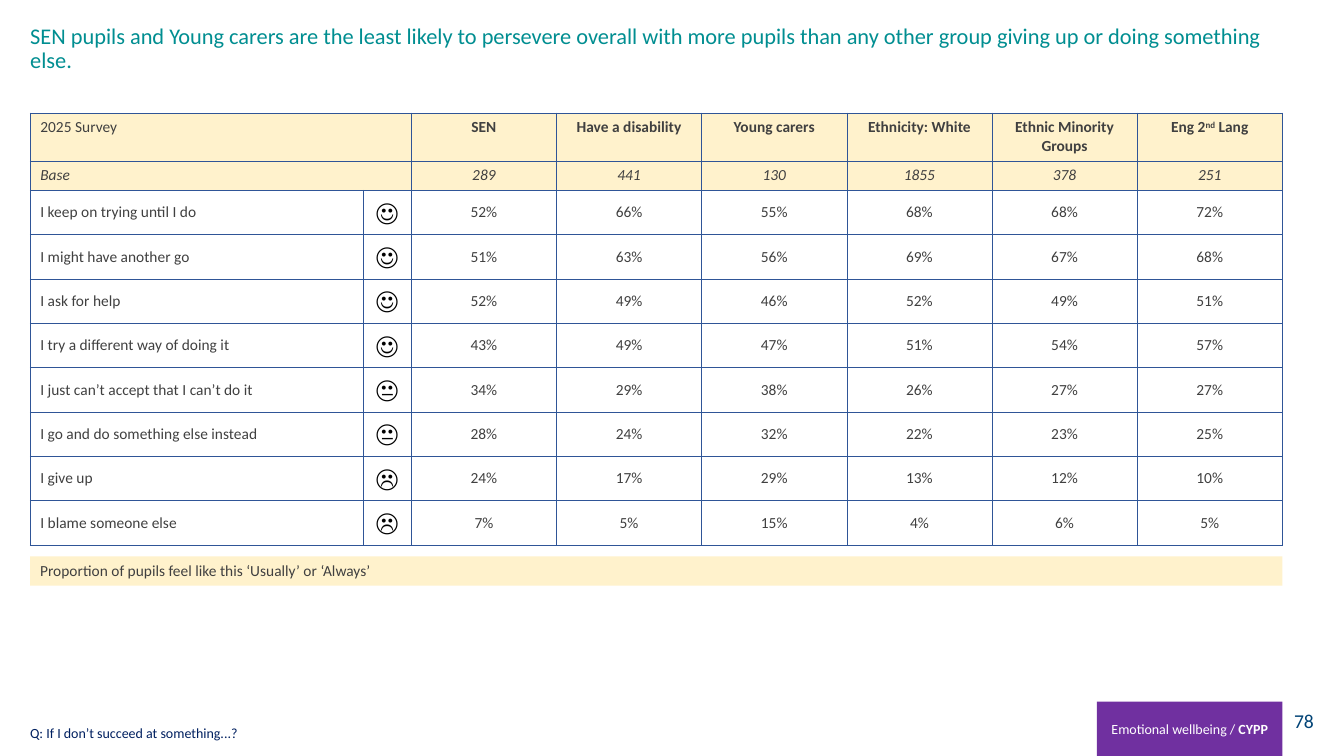
import pptx
import pptx.util
import pptx.dml.color
import pptx.enum.shapes
import pptx.enum.text
import pptx.oxml

Inches = pptx.util.Inches
ALIGN = pptx.enum.text.PP_ALIGN
ANCHOR = pptx.enum.text.MSO_ANCHOR
GREY, CREAM, WHITE, BORDER = "404040", "FFF2CC", "FFFFFF", "2F5597"
MARGIN, WIDTH = 0.3, 12.42
ROW, BASE_ROW = 0.44, 0.29
LABEL, FACE, GROUP = 3.3, 0.48, 1.44


def write(frame, texts, size, colour, align=ALIGN.LEFT, anchor=ANCHOR.TOP):
    frame.word_wrap = True
    frame.vertical_anchor = anchor
    para = frame.paragraphs[0]
    para.alignment = align
    for text in texts:
        span = para.add_run()
        span.text = text
        span.font.name = "Calibri"
        span.font.size = pptx.util.Pt(size)
        span.font.color.rgb = pptx.dml.color.RGBColor.from_string(colour)
    return para


def add_block(left, top, width, height, fill):
    block = page.shapes.add_shape(
        pptx.enum.shapes.MSO_SHAPE.RECTANGLE,
        Inches(left), Inches(top), Inches(width), Inches(height))
    block.shadow.inherit = False
    block.line.fill.background()
    block.fill.solid()
    block.fill.fore_color.rgb = pptx.dml.color.RGBColor.from_string(fill)
    return block.text_frame


deck = pptx.Presentation()
deck.slide_width, deck.slide_height = Inches(13.33), Inches(7.5)
page = deck.slides.add_slide(deck.slide_layouts[5])

title = page.shapes.title
title.left, title.top = Inches(0.2), Inches(0.2)
title.width, title.height = Inches(12.52), Inches(0.98)
title.text_frame.auto_size = pptx.enum.text.MSO_AUTO_SIZE.NONE
heading = write(title.text_frame, [
    "SEN pupils and Young carers are the least likely to persevere overall with more "
    "pupils than any other group giving up or doing something else."], 16, "008E91")
heading.line_spacing = 0.9

write(add_block(12.54, 6.95, 0.59, 0.4, WHITE), ["78"], 14, "004376",
      ALIGN.RIGHT, ANCHOR.MIDDLE)
write(add_block(MARGIN, 5.52, WIDTH, 0.29, CREAM),
      ["Proportion of pupils feel like this ‘Usually’ or ‘Always’"], 11, GREY)
section = write(add_block(10.88, 6.96, 1.84, 0.54, "7030A0"),
                ["Emotional wellbeing / ", "CYPP"], 10, WHITE,
                ALIGN.CENTER, ANCHOR.MIDDLE)
section.runs[1].font.bold = True

rows = [
    ["2025 Survey", "", "SEN", "Have a disability", "Young carers",
     "Ethnicity: White", "Ethnic Minority Groups", "Eng 2|nd| Lang"],
    ["Base", "", 289, 441, 130, 1855, 378, 251],
]
answers = [
    ("I keep on trying until I do", "☺", 52, 66, 55, 68, 68, 72),
    ("I might have another go", "☺", 51, 63, 56, 69, 67, 68),
    ("I ask for help", "☺", 52, 49, 46, 52, 49, 51),
    ("I try a different way of doing it", "☺", 43, 49, 47, 51, 54, 57),
    ("I just can’t accept that I can’t do it", "😐", 34, 29, 38, 26, 27, 27),
    ("I go and do something else instead", "😐", 28, 24, 32, 22, 23, 25),
    ("I give up", "☹", 24, 17, 29, 13, 12, 10),
    ("I blame someone else", "☹", 7, 5, 15, 4, 6, 5),
]
for label, face, *shares in answers:
    rows.append([label, face] + [f"{share}%" for share in shares])

table = page.shapes.add_table(
    len(rows), len(rows[0]), Inches(MARGIN), Inches(1.12), Inches(WIDTH),
    Inches(ROW * (len(rows) - 1) + BASE_ROW)).table
table.first_row = table.horz_banding = False
for index, column in enumerate(table.columns):
    column.width = Inches([LABEL, FACE][index] if index < 2 else GROUP)
for index, line in enumerate(table.rows):
    line.height = Inches(BASE_ROW if index == 1 else ROW)

for row, values in enumerate(rows):
    for col, value in enumerate(values):
        cell = table.cell(row, col)
        for side in ("lnL", "lnR", "lnT", "lnB"):
            cell._tc.get_or_add_tcPr().append(pptx.oxml.parse_xml(
                f'<a:{side} xmlns:a="http://schemas.openxmlformats.org/drawingml/2006/main" '
                f'w="6350"><a:solidFill><a:srgbClr val="{BORDER}"/></a:solidFill></a:{side}>'))
        if row < 2:
            cell.fill.solid()
            cell.fill.fore_color.rgb = pptx.dml.color.RGBColor.from_string(CREAM)
        else:
            cell.fill.background()
        cell.vertical_anchor = ANCHOR.MIDDLE if row else ANCHOR.TOP
        if value == "":
            continue
        is_face = row > 1 and col == 1
        para = cell.text_frame.paragraphs[0]
        para.alignment = ALIGN.CENTER if col else ALIGN.LEFT
        for part in str(value).split("|"):
            span = para.add_run()
            span.text = part
            span.font.name = "Calibri"
            span.font.size = pptx.util.Pt(18 if is_face else 11)
            span.font.color.rgb = pptx.dml.color.RGBColor.from_string(
                "000000" if is_face else GREY)
            span.font.bold = row == 0 and col > 1
            span.font.italic = row == 1
            if part == "nd":
                span.font._element.set("baseline", "30000")
for row in range(2):
    table.cell(row, 0).merge(table.cell(row, 1))

question = page.shapes.add_textbox(Inches(0.2), Inches(7.13), Inches(11.19), Inches(0.27))
write(question.text_frame, ["Q: If I don’t succeed at something...?"], 10, "002060",
      anchor=ANCHOR.BOTTOM)

deck.save("out.pptx")
